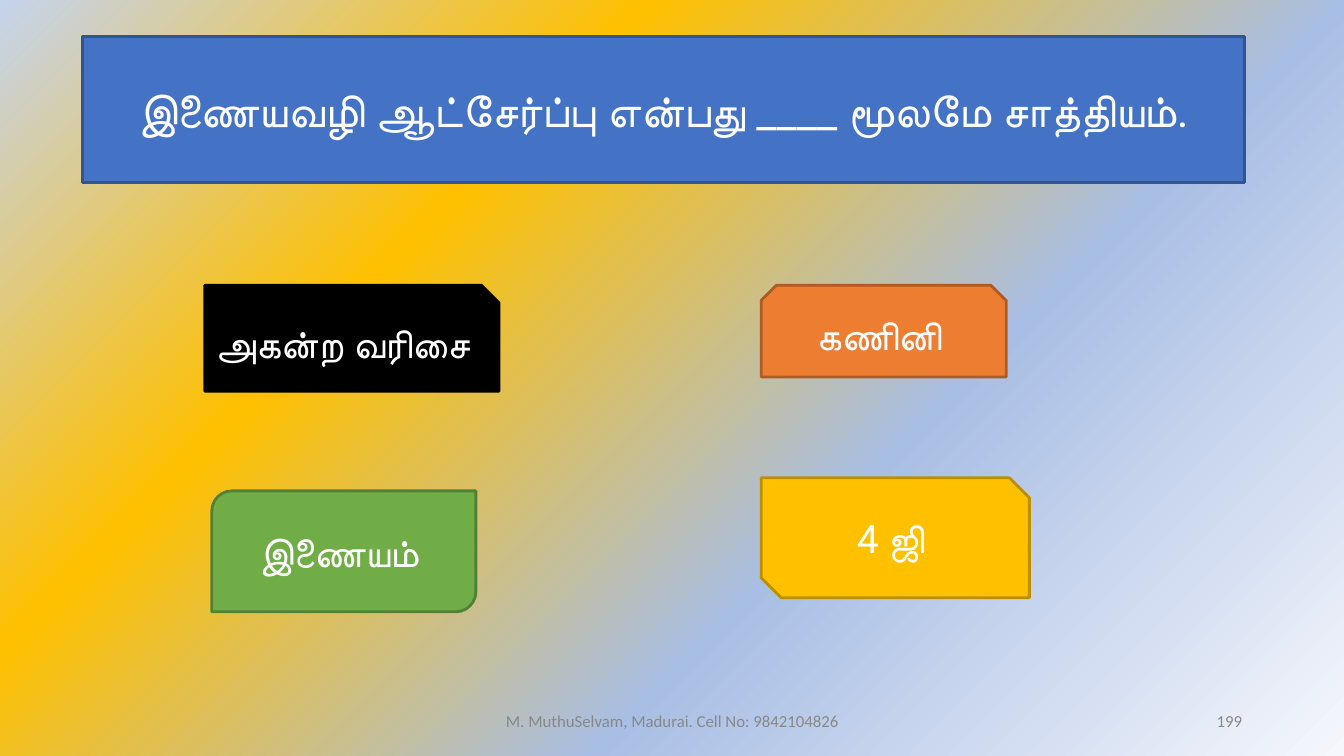
from pptx import Presentation
from pptx.dml.color import RGBColor
from pptx.enum.shapes import MSO_SHAPE as Shape
from pptx.enum.text import MSO_ANCHOR as Anchor, MSO_AUTO_SIZE as AutoSize, PP_ALIGN as Align
from pptx.oxml import parse_xml
from pptx.oxml.ns import nsdecls
from pptx.util import Inches, Pt

COLORS = {
    "white": "FFFFFF", "black": "000000", "gray": "888888",
    "blue": "4472C4", "blue_edge": "325491",
    "orange": "ED7D31", "orange_edge": "AF5C24",
    "gold": "FFC000", "gold_edge": "BD8E00",
    "green": "70AD47", "green_edge": "538035",
    "mist": "F5F7FC", "periwinkle": "A9BEE4", "sky": "C5D3ED",
}
BACKGROUND_STOPS = [(0, "mist"), (36, "periwinkle"), (69, "gold"), (100, "sky")]
QUESTION = "இணையவழி ஆட்சேர்ப்பு என்பது ____ மூலமே சாத்தியம்."
ANSWERS = [
    ("அகன்ற வரிசை ", Shape.SNIP_1_RECTANGLE, (2.03, 2.83, 2.92, 1.05), "black", "black"),
    ("கணினி ", Shape.SNIP_2_SAME_RECTANGLE, (7.55, 2.83, 2.43, 0.91), "orange", "orange_edge"),
    ("4 ஜி ", Shape.SNIP_2_DIAG_RECTANGLE, (7.55, 4.74, 2.66, 1.19), "gold", "gold_edge"),
    ("இணையம் ", Shape.ROUND_2_DIAG_RECTANGLE, (2.1, 4.87, 2.62, 1.2), "green", "green_edge"),
]


def rgb(name):
    return RGBColor.from_string(COLORS[name])


class QuizSlide:
    """Holds the slide and the fonts its elements share."""

    text_font = "Roboto"
    footer_font = "Calibri"

    def __init__(self, deck):
        self.slide = deck.slides.add_slide(deck.slide_layouts[5])

    def background(self, stops):
        """Fill the background with a gradient centred on the bottom right corner."""
        stop_xml = "".join(
            f'<a:gs pos="{percent * 1000}"><a:srgbClr val="{COLORS[color]}"/></a:gs>'
            for percent, color in stops)
        self.slide.element.cSld.insert(0, parse_xml(
            f'<p:bg {nsdecls("p", "a")}><p:bgPr><a:gradFill rotWithShape="1">'
            f'<a:gsLst>{stop_xml}</a:gsLst><a:path path="circle">'
            '<a:fillToRect l="100000" t="100000"/></a:path></a:gradFill>'
            '<a:effectLst/></p:bgPr></p:bg>'))

    def set_text(self, shape, text, size, font, color, align=Align.CENTER):
        frame = shape.text_frame
        frame.text = text
        frame.word_wrap = True
        frame.auto_size = AutoSize.NONE
        frame.vertical_anchor = Anchor.MIDDLE
        para = frame.paragraphs[0]
        para.alignment = align
        span = para.runs[0]
        span.font.size = Pt(size)
        span.font.name = font
        span.font.color.rgb = rgb(color)

    def paint(self, shape, fill, edge):
        shape.fill.solid()
        shape.fill.fore_color.rgb = rgb(fill)
        shape.line.color.rgb = rgb(edge)
        shape.line.width = Pt(2)

    def title_scroll(self, text, bounds, fill, edge):
        """Turn the title placeholder into a horizontal scroll."""
        title = self.slide.shapes.title
        title.left, title.top, title.width, title.height = map(Inches, bounds)
        title.element.spPr.append(parse_xml(
            f'<a:prstGeom {nsdecls("a")} prst="horizontalScroll"><a:avLst/></a:prstGeom>'))
        self.paint(title, fill, edge)
        self.set_text(title, text, 32, self.text_font, "white")

    def answer(self, text, kind, bounds, fill, edge):
        box = self.slide.shapes.add_shape(kind, *map(Inches, bounds))
        box.shadow.inherit = False
        self.paint(box, fill, edge)
        self.set_text(box, text, 28, self.text_font, "white")

    def footer(self, text, left, width, align):
        box = self.slide.shapes.add_textbox(*map(Inches, (left, 6.95, width, 0.4)))
        self.set_text(box, text, 12, self.footer_font, "gray", align)


def main():
    deck = Presentation()
    deck.slide_width, deck.slide_height = Inches(13.33), Inches(7.5)
    page = QuizSlide(deck)
    page.background(BACKGROUND_STOPS)
    page.title_scroll(QUESTION, (0.82, 0.36, 11.52, 1.45), "blue", "blue_edge")
    for answer in ANSWERS:
        page.answer(*answer)
    page.footer("M. MuthuSelvam, Madurai. Cell No: 9842104826", 4.42, 4.5, Align.CENTER)
    page.footer("199", 9.42, 3, Align.RIGHT)
    deck.save("out.pptx")


if __name__ == "__main__":
    main()
